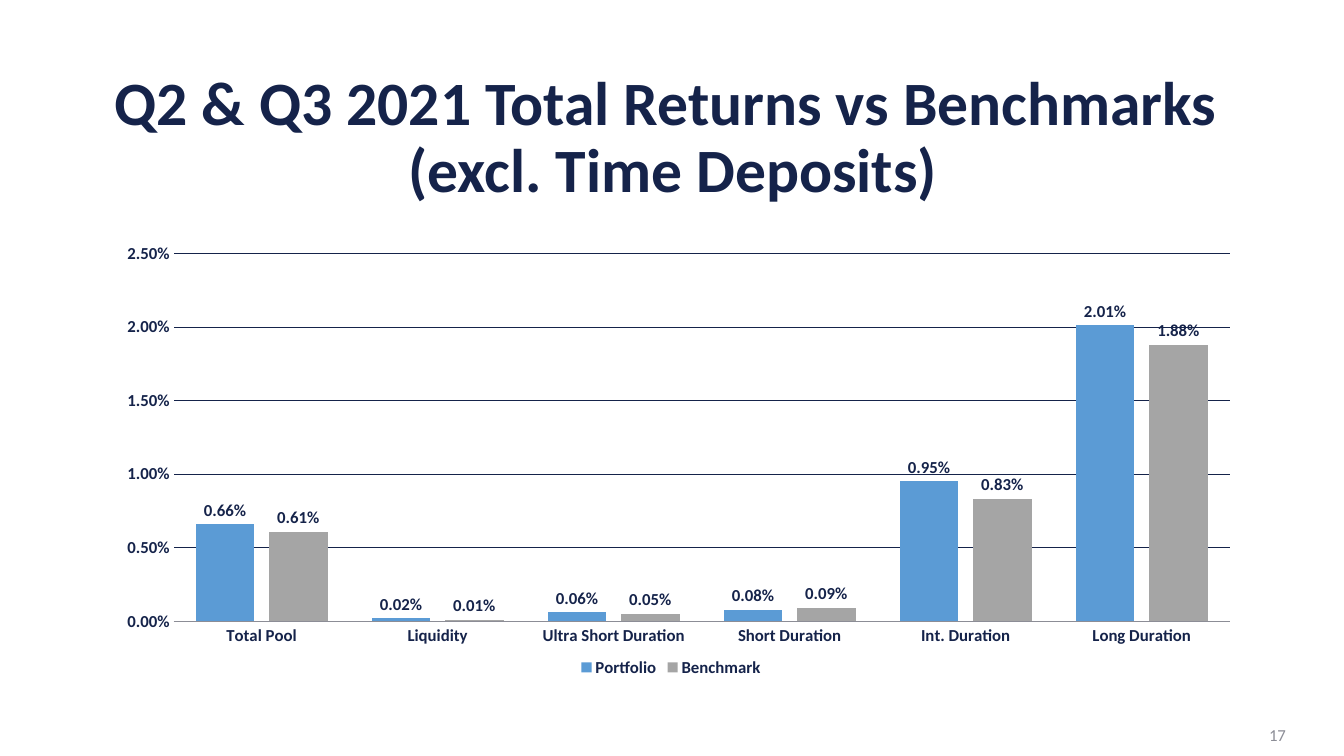
from lxml.etree import SubElement
from pptx import Presentation
from pptx.chart.data import CategoryChartData
from pptx.dml.color import RGBColor
from pptx.enum.chart import XL_CHART_TYPE, XL_LABEL_POSITION, XL_LEGEND_POSITION, XL_TICK_MARK
from pptx.enum.text import MSO_ANCHOR, MSO_AUTO_SIZE, PP_ALIGN
from pptx.oxml.ns import qn
from pptx.util import Cm, Pt

NAVY = RGBColor(0x15, 0x23, 0x4A)
GREY = RGBColor(0x8C, 0x8D, 0x96)
BLUE = RGBColor(0x5B, 0x9B, 0xD5)
SILVER = RGBColor(0xA5, 0xA5, 0xA5)

CATEGORIES = ["Total Pool", "Liquidity", "Ultra Short Duration",
              "Short Duration", "Int. Duration", "Long Duration"]
RETURNS = {
    "Portfolio": (BLUE, [0.0066, 0.0002, 0.0006, 0.0008, 0.0095, 0.0201]),
    "Benchmark": (SILVER, [0.0061, 0.0001, 0.0005, 0.0009, 0.0083, 0.0188]),
}
PLOT_AREA = {"x": 0.063, "y": 0.108, "w": 0.928, "h": 0.767}
PERCENT = "0.00%"


def set_all(target, **values):
    for name, value in values.items():
        setattr(target, name, value)


class ReturnsSlide:
    font_name = "Calibri"

    def __init__(self, deck):
        self.slide = deck.slides.add_slide(deck.slide_layouts[5])

    def style_font(self, font, size=12, color=NAVY, bold=True):
        set_all(font, name=self.font_name, size=Pt(size), bold=bold)
        font.color.rgb = color

    def set_text(self, box, text, alignment, line_spacing=None, **font_values):
        frame = box.text_frame
        set_all(frame, text=text, word_wrap=True, auto_size=MSO_AUTO_SIZE.NONE,
                vertical_anchor=MSO_ANCHOR.MIDDLE)
        para = frame.paragraphs[0]
        set_all(para, alignment=alignment, line_spacing=line_spacing)
        for span in para.runs:
            self.style_font(span.font, **font_values)

    def title(self, text, left, top, width, height):
        title = self.slide.shapes.title
        set_all(title, left=left, top=top, width=width, height=height)
        self.set_text(title, text, PP_ALIGN.CENTER, line_spacing=0.9, size=44)

    def page_number(self, text, *place):
        box = self.slide.shapes.add_textbox(*place)
        self.set_text(box, text, PP_ALIGN.RIGHT, color=GREY, bold=False)

    def column_chart(self, *place):
        data = CategoryChartData(number_format=PERCENT)
        data.categories = CATEGORIES
        for name, (_, values) in RETURNS.items():
            data.add_series(name, values)
        chart = self.slide.shapes.add_chart(
            XL_CHART_TYPE.COLUMN_CLUSTERED, *place, data).chart
        set_all(chart, has_title=False, has_legend=True)
        set_all(chart.legend, position=XL_LEGEND_POSITION.BOTTOM, include_in_layout=False)
        plot = chart.plots[0]
        set_all(plot, gap_width=75, overlap=-25, vary_by_categories=False)
        for series in plot.series:
            series.format.fill.solid()
            series.format.fill.fore_color.rgb = RETURNS[series.name][0]
            labels = series.data_labels
            set_all(labels, show_value=True, number_format=PERCENT,
                    number_format_is_linked=False, position=XL_LABEL_POSITION.OUTSIDE_END)
            self.style_font(labels.font)
        self.format_axes(chart)
        for part in (chart, chart.legend, chart.category_axis.tick_labels,
                     chart.value_axis.tick_labels):
            self.style_font(part.font)
        self.place_plot(chart)

    def format_axes(self, chart):
        categories, values = chart.category_axis, chart.value_axis
        for axis in (categories, values):
            set_all(axis, major_tick_mark=XL_TICK_MARK.NONE, minor_tick_mark=XL_TICK_MARK.NONE)
        set_all(values, minimum_scale=0, maximum_scale=0.025, major_unit=0.005,
                has_major_gridlines=True)
        set_all(values.tick_labels, number_format=PERCENT, number_format_is_linked=False)
        values.format.line.fill.background()
        for owner, color in ((categories, GREY), (values.major_gridlines, NAVY)):
            owner.format.line.width = Pt(0.5)
            owner.format.line.color.rgb = color

    def place_plot(self, chart):
        """Fix the inner plot area as fractions of the chart."""
        plot_area = chart.element.find(".//" + qn("c:plotArea"))
        layout = plot_area.find(qn("c:layout"))
        if layout is None:
            layout = SubElement(plot_area, qn("c:layout"))
            plot_area.insert(0, layout)
        manual = SubElement(layout, qn("c:manualLayout"))
        settings = {"layoutTarget": "inner", "xMode": "edge", "yMode": "edge", **PLOT_AREA}
        for tag, value in settings.items():
            SubElement(manual, qn("c:" + tag)).set("val", str(value))


def main():
    deck = Presentation()
    set_all(deck, slide_width=Cm(33.87), slide_height=Cm(19.05))
    page = ReturnsSlide(deck)
    page.page_number("17", Cm(25.04), Cm(18.01), Cm(7.62), Cm(1.02))
    page.column_chart(Cm(2.57), Cm(5.08), Cm(28.68), Cm(12.09))
    page.title("Q2 & Q3 2021 Total Returns vs Benchmarks\v (excl. Time Deposits)",
               Cm(1.65), Cm(1.91), Cm(30.28), Cm(3.18))
    deck.save("out.pptx")


if __name__ == "__main__":
    main()
